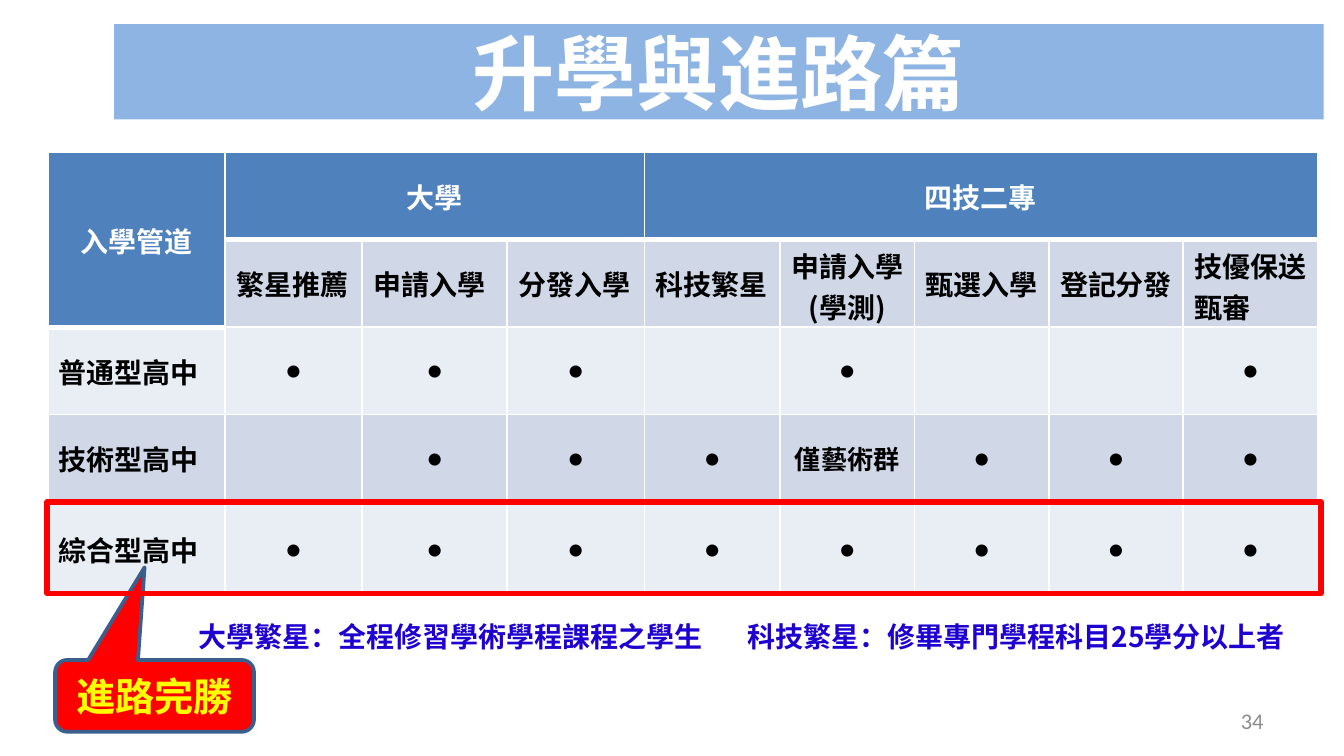
from dataclasses import dataclass

from lxml.etree import SubElement
from pptx import Presentation
from pptx.dml.color import RGBColor
from pptx.enum.shapes import MSO_SHAPE
from pptx.enum.text import MSO_ANCHOR, PP_ALIGN
from pptx.oxml import parse_xml
from pptx.oxml.ns import nsdecls, qn
from pptx.util import Inches, Pt


@dataclass(frozen=True)
class Theme:
    cjk: str = "Noto Sans CJK SC"
    sans: str = "Arial"
    body: str = "Calibri"
    white: str = "FFFFFF"
    black: str = "000000"
    banner: str = "8EB4E3"
    header: str = "4F81BD"
    bands: tuple = ("E9EDF4", "D0D8E8")
    note: str = "1E00D0"
    red: str = "FF0000"
    yellow: str = "FFFF00"
    outline: str = "3A5F8C"
    grey: str = "8C8C8C"
    title_size: int = 44
    callout_size: int = 21
    label_size: int = 15
    mark_size: int = 14
    number_size: int = 12


THEME = Theme()
SLIDE_WIDTH, SLIDE_HEIGHT = Inches(10), Inches(5.625)

GROUPS = [("入學管道", 0, 0, 1, 0), ("大學", 0, 1, 0, 3), ("四技二專", 0, 4, 0, 8)]
CHANNELS = ["繁星推薦", "申請入學", "分發入學", "科技繁星", "申請入學\v(學測)",
            "甄選入學", "登記分發", "技優保送甄審"]
MARK = "●"
SCHOOLS = [
    ["普通型高中", MARK, MARK, MARK, "", MARK, "", "", MARK],
    ["技術型高中", "", MARK, MARK, MARK, "僅藝術群", MARK, MARK, MARK],
    ["綜合型高中"] + [MARK] * 8,
]
COLUMN_SHARES = [1.32, 1.02, 1.08, 1.02, 1.01, 1, 1, 1, 1]
ROW_SHARES = [0.65, 0.65, 0.65, 0.65, 0.71]


@dataclass(frozen=True)
class Box:
    """An area given in percent of the slide's width and height."""
    left: float
    top: float
    width: float
    height: float

    def place(self):
        return (int(SLIDE_WIDTH * self.left / 100), int(SLIDE_HEIGHT * self.top / 100),
                int(SLIDE_WIDTH * self.width / 100), int(SLIDE_HEIGHT * self.height / 100))


def color(value):
    return RGBColor.from_string(value)


def write(text_frame, text, size, font, text_color, bold=True, align=PP_ALIGN.CENTER):
    text_frame.text = text
    paragraph = text_frame.paragraphs[0]
    paragraph.alignment = align
    for run in paragraph.runs:
        run.font.size = Pt(size)
        run.font.bold = bold
        run.font.color.rgb = color(text_color)
        run.font.name = font
        SubElement(run.font._element, qn("a:ea")).set("typeface", THEME.cjk)
    return paragraph


def set_insets(target, horizontal, vertical):
    target.margin_left = target.margin_right = Pt(horizontal)
    target.margin_top = target.margin_bottom = Pt(vertical)


def add_text(slide, box):
    text_frame = slide.shapes.add_textbox(*box.place()).text_frame
    text_frame.word_wrap = True
    text_frame.vertical_anchor = MSO_ANCHOR.MIDDLE
    return text_frame


def add_figure(slide, box, kind, fill=None, line=None, line_width=0):
    shape = slide.shapes.add_shape(kind, *box.place())
    shape.shadow.inherit = False
    if fill:
        shape.fill.solid()
        shape.fill.fore_color.rgb = color(fill)
    else:
        shape.fill.background()
    if line:
        shape.line.color.rgb = color(line)
        shape.line.width = Pt(line_width)
    else:
        shape.line.fill.background()
    shape.text_frame.vertical_anchor = MSO_ANCHOR.MIDDLE
    return shape


def add_title(slide, box):
    banner = add_figure(slide, box, MSO_SHAPE.RECTANGLE, THEME.banner)
    write(banner.text_frame, "升學與進路篇", THEME.title_size, THEME.cjk, THEME.white)


def set_borders(cell, top, bottom):
    properties = cell._tc.get_or_add_tcPr()
    for index, (side, width) in enumerate([("L", 1), ("R", 1), ("T", top), ("B", bottom)]):
        properties.insert(index, parse_xml(
            f'<a:ln{side} {nsdecls("a")} w="{Pt(width)}"><a:solidFill>'
            f'<a:srgbClr val="{THEME.white}"/></a:solidFill></a:ln{side}>'))


def style_cell(cell, row, column):
    is_header = row == 0 or (row == 1 and column == 0)
    below_header = (row == 1 and column > 0) or (row == 2 and column == 0)
    cell.fill.solid()
    cell.fill.fore_color.rgb = color(THEME.header if is_header else THEME.bands[row % 2])
    cell.vertical_anchor = MSO_ANCHOR.MIDDLE
    set_insets(cell, 6, 3)
    set_borders(cell, 3 if below_header else 1, 3 if is_header else 1)


def add_channel_table(slide, box):
    left, top, width, height = box.place()
    table = slide.shapes.add_table(len(ROW_SHARES), len(COLUMN_SHARES),
                                   left, top, width, height).table
    table.first_row = table.horz_banding = False
    for column, share in zip(table.columns, COLUMN_SHARES):
        column.width = int(width * share / sum(COLUMN_SHARES))
    for row, share in zip(table.rows, ROW_SHARES):
        row.height = int(height * share / sum(ROW_SHARES))
    for row in range(len(ROW_SHARES)):
        for column in range(len(COLUMN_SHARES)):
            style_cell(table.cell(row, column), row, column)

    for text, row, column, last_row, last_column in GROUPS:
        cell = table.cell(row, column)
        cell.merge(table.cell(last_row, last_column))
        write(cell.text_frame, text, THEME.label_size, THEME.sans, THEME.white)
    for column, text in enumerate(CHANNELS, 1):
        align = PP_ALIGN.CENTER if "\v" in text else PP_ALIGN.LEFT
        write(table.cell(1, column).text_frame, text, THEME.label_size, THEME.cjk,
              THEME.black, align=align)
    for row, (school, *marks) in enumerate(SCHOOLS, 2):
        write(table.cell(row, 0).text_frame, school, THEME.label_size, THEME.sans,
              THEME.black, align=PP_ALIGN.LEFT)
        for column, text in enumerate(marks, 1):
            is_mark = text == MARK
            if text:
                write(table.cell(row, column).text_frame, text, THEME.mark_size,
                      THEME.body if is_mark else THEME.sans, THEME.black, bold=not is_mark)


def add_note(slide, box):
    """Two remarks on one line, the second at a tab stop."""
    text_frame = add_text(slide, box)
    set_insets(text_frame, 5, 3)
    paragraph = write(text_frame, "大學繁星：全程修習學術學程課程之學生\t科技繁星：修畢專門學程科目25學分以上者",
                      THEME.label_size, THEME.cjk, THEME.note, align=PP_ALIGN.LEFT)
    tabs = SubElement(paragraph._p.get_or_add_pPr(), qn("a:tabLst"))
    SubElement(tabs, qn("a:tab"), pos=str(int(box.place()[2] * 0.48)), algn="l")


def add_callout(slide, box):
    callout = add_figure(slide, box, MSO_SHAPE.ROUNDED_RECTANGULAR_CALLOUT,
                         THEME.red, THEME.outline, 2)
    for index, value in enumerate([-0.05, -1.79, 0.17]):
        callout.adjustments[index] = value
    set_insets(callout.text_frame, 5, 3)
    write(callout.text_frame, "進路完勝", THEME.callout_size, THEME.cjk, THEME.yellow)


def add_highlight(slide, box):
    add_figure(slide, box, MSO_SHAPE.RECTANGLE, line=THEME.red, line_width=3)


def add_slide_number(slide, box):
    write(add_text(slide, box), "34", THEME.number_size, THEME.body, THEME.grey,
          bold=False, align=PP_ALIGN.RIGHT)


def main():
    presentation = Presentation()
    presentation.slide_width, presentation.slide_height = SLIDE_WIDTH, SLIDE_HEIGHT
    slide = presentation.slides.add_slide(presentation.slide_layouts[6])
    add_slide_number(slide, Box(71.7, 92.7, 23.3, 5.3))
    add_title(slide, Box(8.5, 3.2, 90, 12.6))
    add_channel_table(slide, Box(3.55, 20.2, 94.5, 58.8))
    add_note(slide, Box(14.1, 80, 85.1, 8.4))
    add_callout(slide, Box(4.1, 87.3, 14.8, 9.5))
    add_highlight(slide, Box(3.5, 66.4, 94.8, 12.1))
    presentation.save("out.pptx")


if __name__ == "__main__":
    main()
